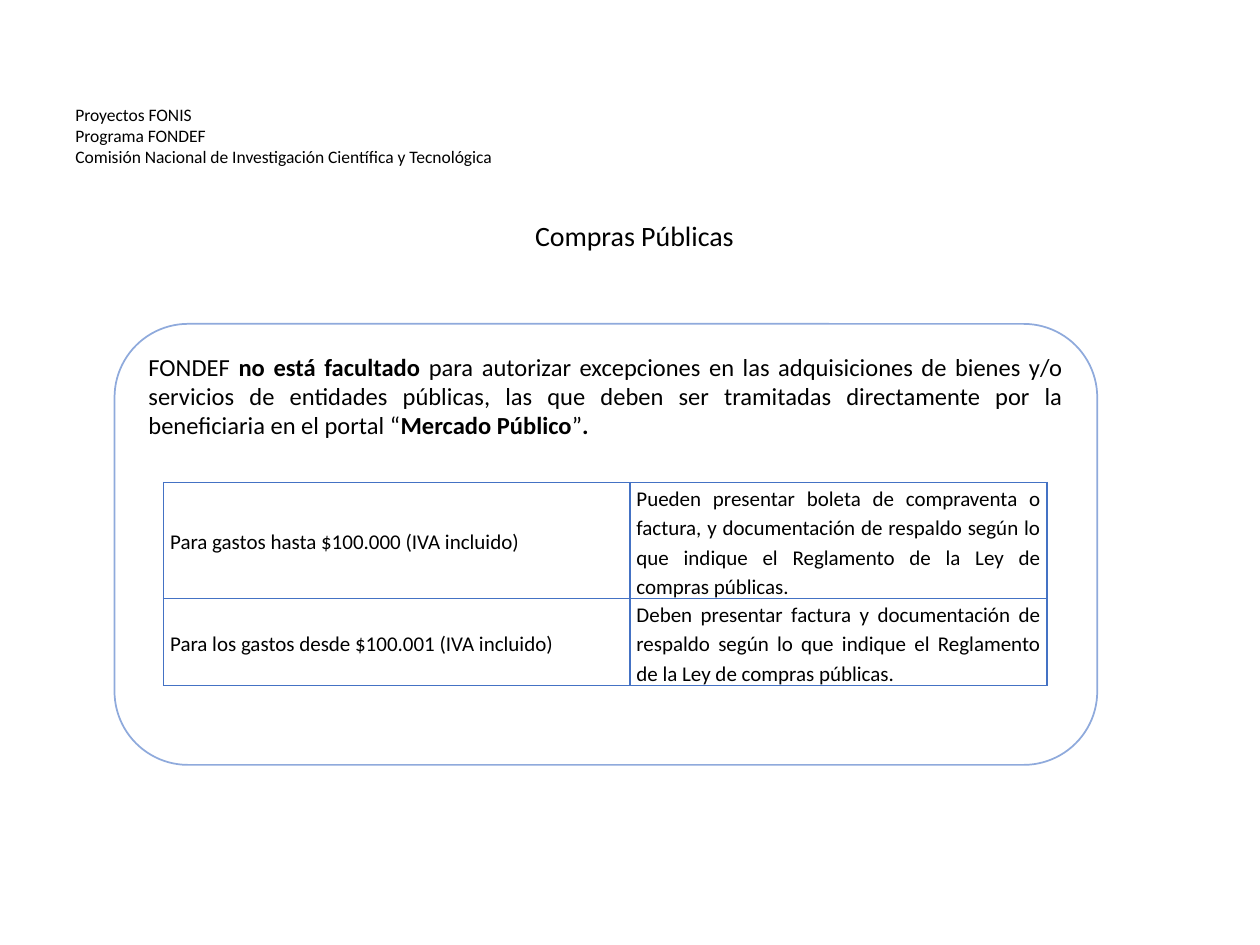
from lxml.etree import SubElement
from pptx import Presentation
from pptx.dml.color import RGBColor as Rgb
from pptx.enum.shapes import MSO_SHAPE as Shape
from pptx.enum.text import MSO_ANCHOR as Anchor, PP_ALIGN as Align
from pptx.oxml.ns import qn
from pptx.util import Cm, Pt

COLORS = {"text": "000000", "frame": "8FAADC", "border": "4472C4"}
FONT = "Calibri"

HEADER = [
    "Proyectos FONIS",
    "Programa FONDEF",
    "Comisión Nacional de Investigación Científica y Tecnológica",
]
TITLE = "Compras Públicas"
NOTICE = [
    ("FONDEF ", False),
    ("no está facultado", True),
    (" para autorizar excepciones en las adquisiciones de bienes y/o servicios "
     "de entidades públicas, las que deben ser tramitadas directamente por la "
     "beneficiaria en el portal “", False),
    ("Mercado Público", True),
    ("”", False),
    (".", True),
]
EXPENSES = [
    ("Para gastos hasta $100.000 (IVA incluido)",
     "Pueden presentar boleta de compraventa o factura, y documentación de "
     "respaldo según lo que indique el Reglamento de la Ley de compras públicas."),
    ("Para los gastos desde $100.001 (IVA incluido)",
     "Deben presentar factura y documentación de respaldo según lo que indique "
     "el Reglamento de la Ley de compras públicas."),
]
COLUMN_WIDTHS = [9.4, 8.41]
ROW_HEIGHTS = [2.34, 1.75]


def style(paragraph, size, align):
    paragraph.alignment = align
    for run in paragraph.runs:
        run.font.name = FONT
        run.font.size = Pt(size)
        run.font.color.rgb = Rgb.from_string(COLORS["text"])


def add_text(slide, text, box, size, align, anchor):
    frame = slide.shapes.add_textbox(*map(Cm, box)).text_frame
    frame.word_wrap = True
    frame.vertical_anchor = anchor
    frame.text = text
    style(frame.paragraphs[0], size, align)


def add_notice(slide):
    panel = slide.shapes.add_shape(
        Shape.ROUNDED_RECTANGLE, Cm(2.31), Cm(6.53), Cm(19.81), Cm(8.89))
    panel.shadow.inherit = False
    panel.fill.background()
    panel.line.color.rgb = Rgb.from_string(COLORS["frame"])
    panel.line.width = Pt(1)
    frame = panel.text_frame
    frame.word_wrap = True
    frame.vertical_anchor = Anchor.TOP
    paragraph = frame.paragraphs[0]
    for text, bold in NOTICE:
        run = paragraph.add_run()
        run.text = text
        run.font.bold = bold
    style(paragraph, 14, Align.JUSTIFY)


def add_borders(cell):
    properties = cell._tc.get_or_add_tcPr()
    for side in ("lnL", "lnR", "lnT", "lnB"):
        line = SubElement(properties, qn(f"a:{side}"), w=str(Pt(1)))
        fill = SubElement(line, qn("a:solidFill"))
        SubElement(fill, qn("a:srgbClr"), val=COLORS["border"])


def add_expenses(slide):
    table = slide.shapes.add_table(
        len(EXPENSES), len(COLUMN_WIDTHS), Cm(3.3), Cm(9.73),
        Cm(sum(COLUMN_WIDTHS)), Cm(sum(ROW_HEIGHTS))).table
    table.first_row = table.horz_banding = False
    for column, width in zip(table.columns, COLUMN_WIDTHS):
        column.width = Cm(width)
    for row, height, texts in zip(table.rows, ROW_HEIGHTS, EXPENSES):
        row.height = Cm(height)
        for cell, text, anchor in zip(row.cells, texts, (Anchor.MIDDLE, Anchor.TOP)):
            cell.text = text
            cell.vertical_anchor = anchor
            cell.margin_left = cell.margin_right = Cm(0.13)
            cell.margin_top = cell.margin_bottom = 0
            add_borders(cell)
            cell.fill.background()
            paragraph = cell.text_frame.paragraphs[0]
            paragraph.line_spacing = 1.15
            paragraph.space_after = Pt(10)
            style(paragraph, 12, Align.JUSTIFY)


def main():
    deck = Presentation()
    deck.slide_width, deck.slide_height = Cm(25.4), Cm(19.05)
    slide = deck.slides.add_slide(deck.slide_layouts[6])
    add_text(slide, TITLE, (1.27, 4.29, 23.04, 0.94), 16, Align.CENTER, Anchor.TOP)
    add_text(slide, "\v".join(HEADER), (1.27, 1.52, 19.84, 2.41), 10,
             Align.LEFT, Anchor.MIDDLE)
    add_notice(slide)
    add_expenses(slide)
    deck.save("out.pptx")


if __name__ == "__main__":
    main()
